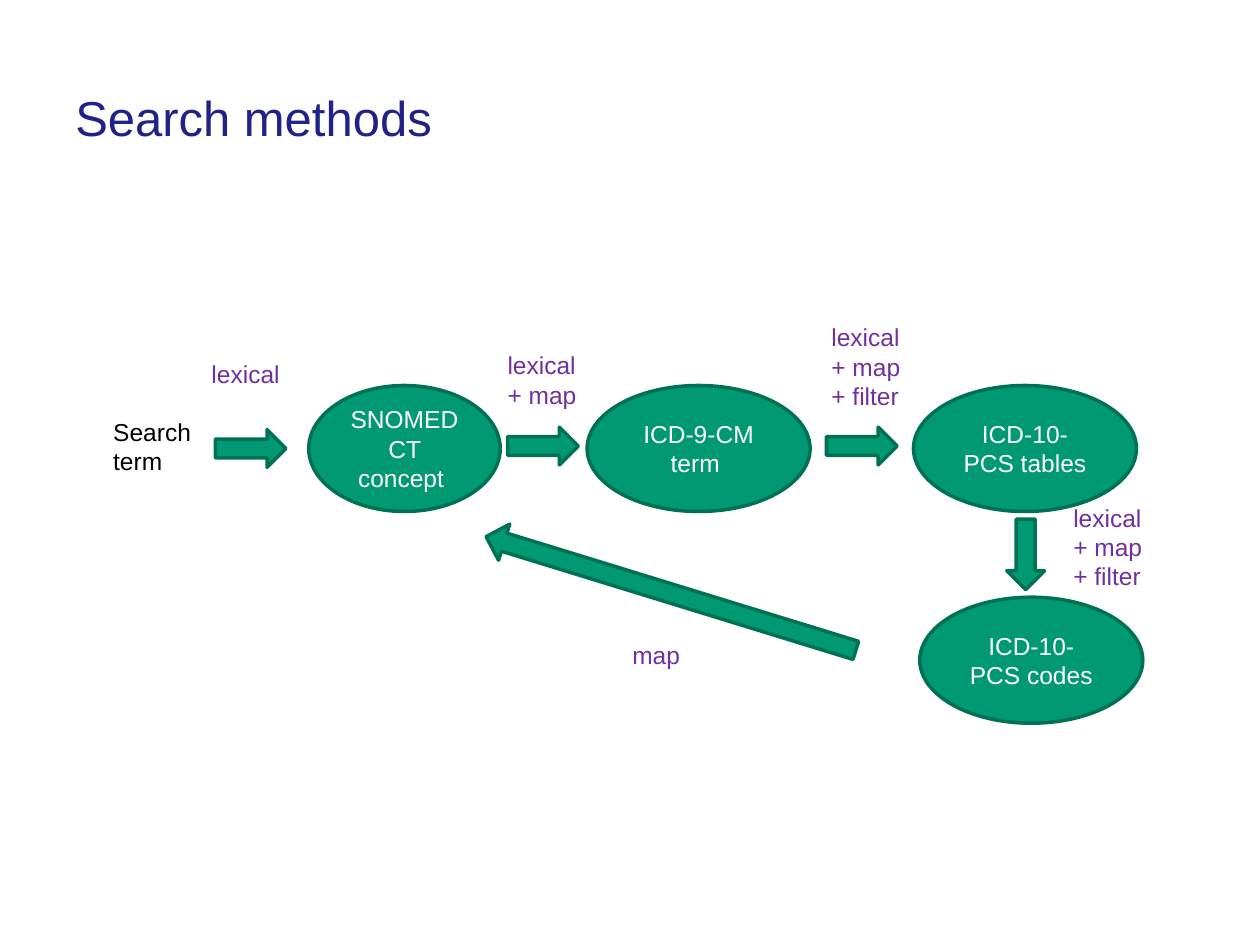
"""Build the search methods slide on a grid of 100 columns by 75 rows."""
from pptx import Presentation
from pptx.dml.color import RGBColor
from pptx.enum.shapes import MSO_SHAPE
from pptx.enum.text import MSO_ANCHOR, PP_ALIGN
from pptx.util import Inches, Pt

OVAL, ARROW = MSO_SHAPE.OVAL, MSO_SHAPE.RIGHT_ARROW
MIDDLE, TOP = MSO_ANCHOR.MIDDLE, MSO_ANCHOR.TOP
LEFT, CENTER = PP_ALIGN.LEFT, PP_ALIGN.CENTER
GREEN, EDGE, WHITE = "009972", "007154", "FFFFFF"
NAVY, BLACK, PURPLE = "21218A", "000000", "7030A0"

deck = Presentation()
deck.slide_width, deck.slide_height = Inches(10), Inches(7.5)
cell = deck.slide_width / 100
slide = deck.slides.add_slide(deck.slide_layouts[6])


def color(code):
    return RGBColor.from_string(code)


def write(shape, text, size, tint, align, anchor):
    frame = shape.text_frame
    frame.word_wrap = True
    frame.vertical_anchor = anchor
    frame.text = text
    for para in frame.paragraphs:
        para.alignment = align
        para.font.name = "Arial"
        para.font.size = Pt(size)
        para.font.color.rgb = color(tint)


row, tall = 30.6, 10
nodes = [
    (24.5, row, 15.2, "SNOMED CT concept "),
    (46.6, row, 17.7, "ICD-9-CM term "),
    (72.5, row, 17.7, "ICD-10-PCS tables"),
    (73, 47.4, 17.7, "ICD-10-PCS codes"),
]
arrows = [
    (17.1, 34.1, 5.6, 0),
    (40.3, 33.9, 5.6, 0),
    (65.6, 33.9, 5.6, 0),
    (78.6, 42.5, 5.6, 90),
    (37.9, 45.6, 30.7, 197.1),
]
shapes = [(OVAL, x, y, wide, tall, 0, text) for x, y, wide, text in nodes]
shapes += [(ARROW, x, y, wide, 3, turn, "") for x, y, wide, turn in arrows]
for kind, x, y, wide, high, turn, text in shapes:
    box = [round(n * cell) for n in (x, y, wide, high)]
    shape = slide.shapes.add_shape(kind, *box)
    shape.rotation = turn
    shape.shadow.inherit = False
    shape.fill.solid()
    shape.fill.fore_color.rgb = color(GREEN)
    shape.line.color.rgb = color(EDGE)
    shape.line.width = Pt(2)
    if text:
        write(shape, text, 14, WHITE, CENTER, MIDDLE)

labels = [
    (5, 6.1, 73.4, 6.3, "Search methods", 28, NAVY, MIDDLE),
    (8, 32.6, 9.1, 5.7, "Search\nterm", 14, BLACK, TOP),
    (15.8, 28, 7.8, 3.4, "lexical", 14, PURPLE, TOP),
    (49.2, 50.3, 6.2, 3.4, "map", 14, PURPLE, TOP),
    (39.3, 27.3, 8.4, 5.7, "lexical + map", 14, PURPLE, TOP),
    (65, 25.1, 8.4, 8.1, "lexical + map + filter", 14, PURPLE, TOP),
    (84.2, 39.4, 8.4, 8.1, "lexical + map + filter", 14, PURPLE, TOP),
]
for x, y, wide, high, text, size, tint, anchor in labels:
    box = [round(n * cell) for n in (x, y, wide, high)]
    label = slide.shapes.add_textbox(*box)
    write(label, text, size, tint, LEFT, anchor)

deck.save("out.pptx")
